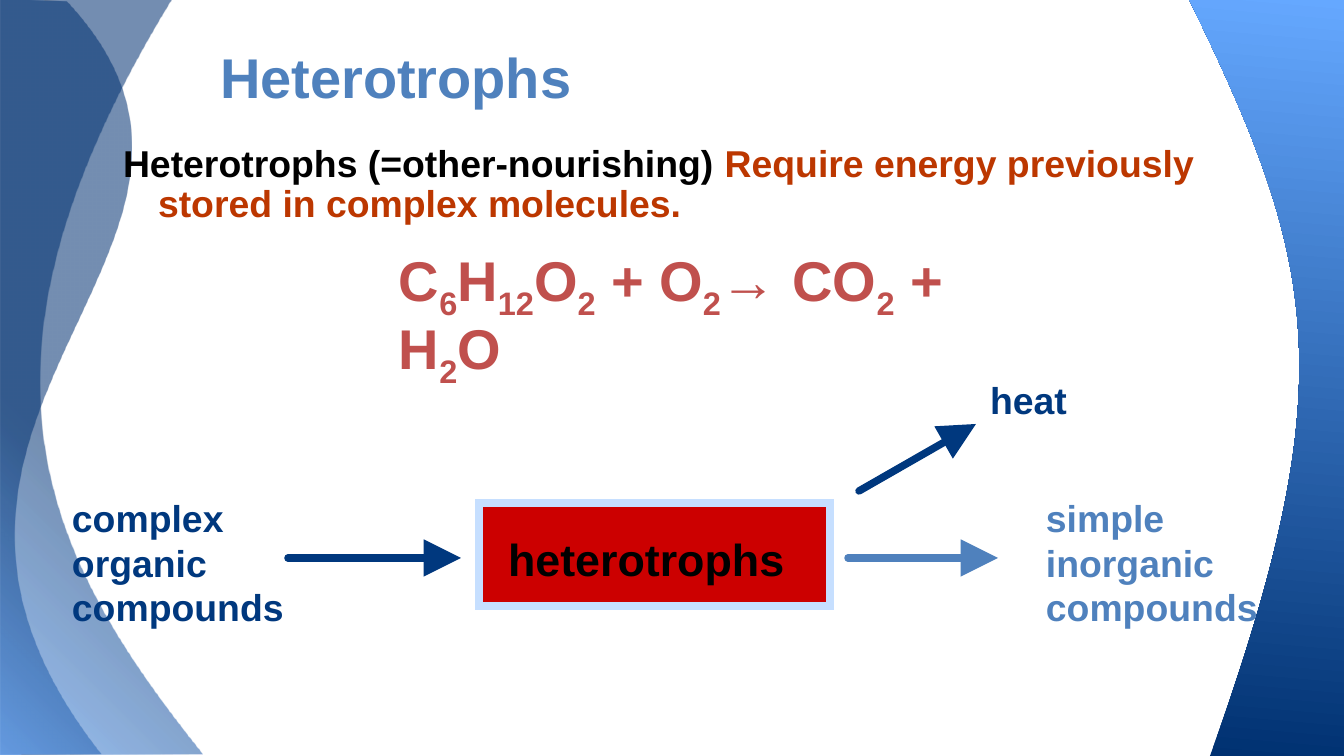
from dataclasses import dataclass

from lxml.etree import SubElement
from pptx import Presentation
from pptx.dml.color import RGBColor
from pptx.enum.shapes import MSO_CONNECTOR, MSO_SHAPE
from pptx.enum.text import MSO_ANCHOR, MSO_AUTO_SIZE, PP_ALIGN
from pptx.oxml.ns import qn
from pptx.util import Pt

EMU_PER_PX = 914400 / 134.4
SLIDE_WIDTH, SLIDE_HEIGHT = 1344, 756


def px(length):
    return round(length * EMU_PER_PX)


def apply(target, values):
    for name, value in values.items():
        setattr(target, name, value)


@dataclass(frozen=True)
class Theme:
    font: str = "Arial"
    heading: str = "4F81BD"
    navy: str = "00387E"
    text: str = "000000"
    accent: str = "BC3700"
    equation: str = "C0504D"
    box_fill: str = "CC0000"
    box_line: str = "C6DFFF"
    wave_light: str = "549FFF"
    wave_dark: str = "003171"
    edge_light: str = "65A8FF"
    large: int = 30
    medium: int = 24
    small: int = 20
    stroke: int = 4


class SlideBuilder:
    def __init__(self, slide, theme):
        self.slide, self.theme = slide, theme
        self.backdrop_count = 0

    def place(self, shape, box):
        apply(shape, dict(zip(("left", "top", "width", "height"), map(px, box))))

    def frame(self, shape, anchor=MSO_ANCHOR.TOP):
        apply(shape.text_frame, {
            "word_wrap": True, "auto_size": MSO_AUTO_SIZE.NONE, "vertical_anchor": anchor,
            "margin_left": px(11), "margin_right": px(11),
            "margin_top": px(5), "margin_bottom": px(5)})
        return shape.text_frame

    def run(self, paragraph, text, size, color, subscript=False):
        run = paragraph.add_run()
        run.text = text
        apply(run.font, {"name": self.theme.font, "size": Pt(size), "bold": True})
        run.font.color.rgb = RGBColor.from_string(color)
        if subscript:
            run._r.get_or_add_rPr().set("baseline", "-25000")

    def title(self, text, box):
        shape = self.slide.shapes.title
        self.place(shape, box)
        paragraph = self.frame(shape, MSO_ANCHOR.MIDDLE).paragraphs[0]
        apply(paragraph, {"alignment": PP_ALIGN.LEFT, "line_spacing": 0.9})
        self.run(paragraph, text, self.theme.large, self.theme.heading)

    def body(self, index, box, first_indent, space_before):
        """Prepare a body placeholder and return its unbulleted paragraph."""
        shape = self.slide.placeholders[index]
        self.place(shape, box)
        paragraph = self.frame(shape).paragraphs[0]
        apply(paragraph, {"alignment": PP_ALIGN.LEFT, "line_spacing": 0.9,
                          "space_before": Pt(space_before)})
        properties = paragraph._p.get_or_add_pPr()
        properties.set("marL", str(px(35)))
        properties.set("indent", str(px(first_indent)))
        SubElement(properties, qn("a:buNone"))
        return paragraph

    def label(self, lines, box, size, color):
        shape = self.slide.shapes.add_textbox(*map(px, box))
        frame = self.frame(shape)
        for number, line in enumerate(lines):
            paragraph = frame.add_paragraph() if number else frame.paragraphs[0]
            self.run(paragraph, line, size, color)

    def box(self, box):
        shape = self.slide.shapes.add_shape(MSO_SHAPE.RECTANGLE, *map(px, box))
        shape.shadow.inherit = False
        shape.fill.solid()
        shape.fill.fore_color.rgb = RGBColor.from_string(self.theme.box_fill)
        shape.line.color.rgb = RGBColor.from_string(self.theme.box_line)
        shape.line.width = Pt(self.theme.stroke)
        SubElement(shape.line._get_or_add_ln(), qn("a:miter"), lim="800000")

    def arrow(self, start, end, color):
        connector = self.slide.shapes.add_connector(
            MSO_CONNECTOR.STRAIGHT, *map(px, start + end))
        connector.line.color.rgb = RGBColor.from_string(color)
        connector.line.width = Pt(self.theme.stroke)
        line = connector.line._get_or_add_ln()
        line.set("cap", "rnd")
        SubElement(line, qn("a:tailEnd"), type="triangle", w="lg", len="lg")
        SubElement(connector.element.spPr, qn("a:effectLst"))

    def backdrop(self, corners, curve, stops, angle=None, opacity=100):
        """Half-turned gradient outline on the master: corners, then one cubic curve.

        The curve holds two controls and an end; without an angle the gradient is radial.
        """
        points = corners + curve
        x_sum, y_sum = (min(axis) + max(axis) for axis in zip(*points))
        start, *rest = [(px(x_sum - x), px(y_sum - y)) for x, y in points]
        builder = self.slide.shapes.build_freeform(*start)
        builder.add_line_segments(rest, close=True)
        shape = builder.convert_to_shape()
        shape.rotation = 180
        shape.shadow.inherit = False
        shape.line.fill.background()

        segments = list(shape.element.iter(qn("a:lnTo")))[len(corners) - 1:][:3]
        outline = segments[0].getparent()
        bezier = SubElement(outline, qn("a:cubicBezTo"))
        outline.replace(segments[0], bezier)
        for segment in segments:
            bezier.append(segment[0])
        for segment in segments[1:]:
            outline.remove(segment)

        shape.fill.gradient()
        gradient = shape.element.spPr.find(qn("a:gradFill"))
        for child in list(gradient):
            gradient.remove(child)
        stop_list = SubElement(gradient, qn("a:gsLst"))
        for position, color in stops:
            stop = SubElement(stop_list, qn("a:gs"), pos=str(position * 1000))
            fill = SubElement(stop, qn("a:srgbClr"), val=color)
            if opacity < 100:
                SubElement(fill, qn("a:alpha"), val=str(opacity * 1000))
        if angle is None:
            radial = SubElement(gradient, qn("a:path"), path="circle")
            SubElement(radial, qn("a:fillToRect"), l="0", t="100000", r="100000", b="0")
        else:
            SubElement(gradient, qn("a:lin"), ang=str(angle * 60000), scaled="0")
        master = self.slide.slide_layout.slide_master
        master.shapes.element.insert(2 + self.backdrop_count, shape.element)
        self.backdrop_count += 1


def main():
    presentation = Presentation()
    presentation.slide_width, presentation.slide_height = px(SLIDE_WIDTH), px(SLIDE_HEIGHT)
    theme = Theme()
    slide = presentation.slides.add_slide(presentation.slide_layouts.get_by_name("Two Content"))
    builder = SlideBuilder(slide, theme)

    wave_stops = [(0, theme.wave_light), (41, theme.wave_dark), (100, theme.wave_dark)]
    left_waves = [
        ([(202, 754), (-1, 755), (0, -3), (171, 0)], [(-51, 366), (44, 555), (202, 754)]),
        ([(101, 754), (1, 755), (1, 0), (67, 2)], [(292, 245), (-164, 414), (101, 754)]),
    ]
    for corners, curve in left_waves:
        builder.backdrop(corners, curve, wave_stops, opacity=54)
    builder.backdrop([(1189, -1), (1351, -1), (1351, 756), (1210, 756)],
                     [(1345, 382), (1318, 263), (1189, -1)],
                     [(0, theme.wave_dark), (100, theme.edge_light)], angle=95)

    builder.title("Heterotrophs", (209, 7, 414, 146))
    definition = builder.body(1, (112, 140, 1210, 146), first_indent=-35, space_before=0)
    builder.run(definition, "Heterotrophs (=other-nourishing) ", theme.small, theme.text)
    builder.run(definition, "Require energy previously stored in complex molecules.",
                theme.small, theme.accent)

    equation = builder.body(2, (353, 241, 698, 160), first_indent=0, space_before=6)
    parts = "C|6|H|12|O|2| + O|2|→ CO|2| + H|2|O".split("|")
    for number, part in enumerate(parts):
        builder.run(equation, part, theme.large, theme.equation, subscript=number % 2 == 1)

    builder.box((479, 503, 351, 103))
    builder.label(["heterotrophs"], (497, 527, 310, 56), theme.medium, theme.text)
    for left, first_lines, color in ((1035, ["simple", "inorganic"], theme.heading),
                                     (61, ["complex", "organic"], theme.navy)):
        builder.label([*first_lines, "compounds"], (left, 490, 249, 130), theme.small, color)
    builder.label(["heat"], (979, 372, 106, 50), theme.small, theme.navy)

    builder.arrow((848, 558), (998, 558), theme.heading)
    builder.arrow((288, 558), (461, 558), theme.navy)
    builder.arrow((859, 491), (976, 424), theme.navy)

    presentation.save("out.pptx")


if __name__ == "__main__":
    main()
